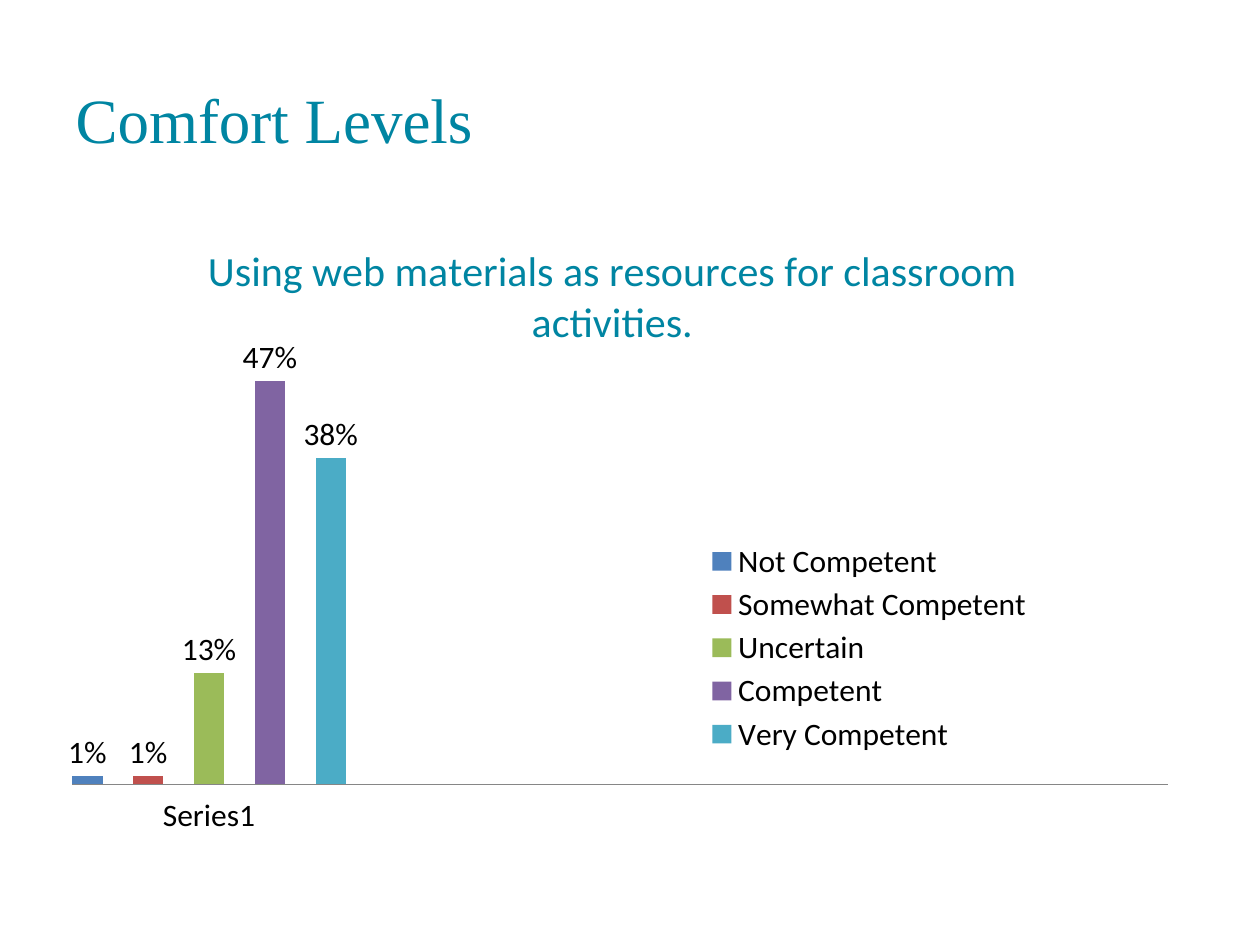
from lxml import etree
from pptx import Presentation
from pptx.chart.data import CategoryChartData
from pptx.dml.color import RGBColor
from pptx.enum.chart import (XL_CHART_TYPE, XL_LABEL_POSITION, XL_LEGEND_POSITION,
                             XL_TICK_LABEL_POSITION, XL_TICK_MARK)
from pptx.enum.text import MSO_ANCHOR, PP_ALIGN
from pptx.oxml.ns import qn
from pptx.util import Inches, Pt

COLUMNS = XL_CHART_TYPE.COLUMN_CLUSTERED
OUTSIDE_END = XL_LABEL_POSITION.OUTSIDE_END
BOTTOM = XL_LEGEND_POSITION.BOTTOM
LOW = XL_TICK_LABEL_POSITION.LOW
NO_TICK = XL_TICK_MARK.NONE
MIDDLE, LEFT = MSO_ANCHOR.MIDDLE, PP_ALIGN.LEFT

TITLE_ONLY = 5
CATEGORIES = ["Series1", "", "", ""]
RATINGS = [
    ("Not Competent", 0.01, "4F81BD"),
    ("Somewhat Competent", 0.01, "C0504D"),
    ("Uncertain", 0.13, "9BBB59"),
    ("Competent", 0.47, "8064A2"),
    ("Very Competent", 0.38, "4BACC6"),
]


def rgb(hex_color):
    return RGBColor.from_string(hex_color)


def set_layout(element, index, inner=False, **shares):
    """Place a chart part by x, y, w, h shares of the chart; index is the layout's child position."""
    for old in element.findall(qn("c:layout")):
        element.remove(old)
    layout = etree.Element(qn("c:layout"))
    manual = etree.SubElement(layout, qn("c:manualLayout"))
    if inner:
        etree.SubElement(manual, qn("c:layoutTarget"), val="inner")
    for key in ("x", "y"):
        etree.SubElement(manual, qn(f"c:{key}Mode"), val="edge")
    for key, share in shares.items():
        etree.SubElement(manual, qn(f"c:{key}"), val=str(share))
    element.insert(index, layout)


class Deck:
    heading_font, body_font = "Times New Roman", "Calibri"
    accent, ink, axis = "0085A2", "000000", "868686"

    def __init__(self, width, height):
        self.prs = Presentation()
        self.prs.slide_width, self.prs.slide_height = Inches(width), Inches(height)
        self.s = self.prs.slides.add_slide(self.prs.slide_layouts[TITLE_ONLY])

    def box(self, x, y, w, h):
        """Turn shares of the slide into lengths."""
        width, height = self.prs.slide_width, self.prs.slide_height
        return int(x * width), int(y * height), int(w * width), int(h * height)

    def style(self, font, name, size, color):
        font.name, font.size, font.bold = name, Pt(size), False
        font.color.rgb = rgb(color)

    def title(self, text, *shares):
        sp = self.s.shapes.title
        sp.left, sp.top, sp.width, sp.height = self.box(*shares)
        tf = sp.text_frame
        tf.vertical_anchor = MIDDLE
        p = tf.paragraphs[0]
        p.alignment = LEFT
        r = p.add_run()
        r.text = text
        self.style(r.font, self.heading_font, 36, self.accent)

    def column_chart(self, heading, categories, ratings, *shares):
        data = CategoryChartData(number_format="0%")
        data.categories = categories
        for name, value, _ in ratings:
            data.add_series(name, [value] + [None] * (len(categories) - 1))
        chart = self.s.shapes.add_chart(COLUMNS, *self.box(*shares), data).chart
        self.style(chart.font, self.body_font, 18, self.ink)

        chart.has_title = True
        r = chart.chart_title.text_frame.paragraphs[0].add_run()
        r.text = heading
        self.style(r.font, self.body_font, 24, self.accent)

        plot = chart.plots[0]
        plot.vary_by_categories = False
        plot.gap_width, plot.overlap = 0, -100
        for series, (_, _, color) in zip(plot.series, ratings):
            series.format.fill.solid()
            series.format.fill.fore_color.rgb = rgb(color)
            labels = series.data_labels
            labels.show_value = True
            labels.number_format, labels.number_format_is_linked = "0%", False
            labels.position = OUTSIDE_END

        x_axis, y_axis = chart.category_axis, chart.value_axis
        x_axis.major_tick_mark = NO_TICK
        x_axis.tick_label_position = LOW
        x_axis.format.line.color.rgb = rgb(self.axis)
        y_axis.has_major_gridlines = y_axis.visible = False
        y_axis.minimum_scale, y_axis.maximum_scale = 0, 0.5

        chart.has_legend = True
        chart.legend.position = BOTTOM
        chart.legend.include_in_layout = False

        root = chart.element.find(qn("c:chart"))
        set_layout(root.find(qn("c:title")), 1, x=0.13, y=0.04)
        set_layout(root.find(qn("c:plotArea")), 0, inner=True, x=0.017, y=0.235, w=0.966, h=0.697)
        set_layout(root.find(qn("c:legend")), 1, x=0.57, y=0.53, w=0.3, h=0.36)


def main():
    deck = Deck(10, 7.5)
    deck.title("Comfort Levels", 0.05, 0.04, 0.82, 0.17)
    deck.column_chart("Using web materials as resources for classroom activities.",
                      CATEGORIES, RATINGS, 0.042, 0.223, 0.9, 0.66)
    deck.prs.save("out.pptx")


if __name__ == "__main__":
    main()
